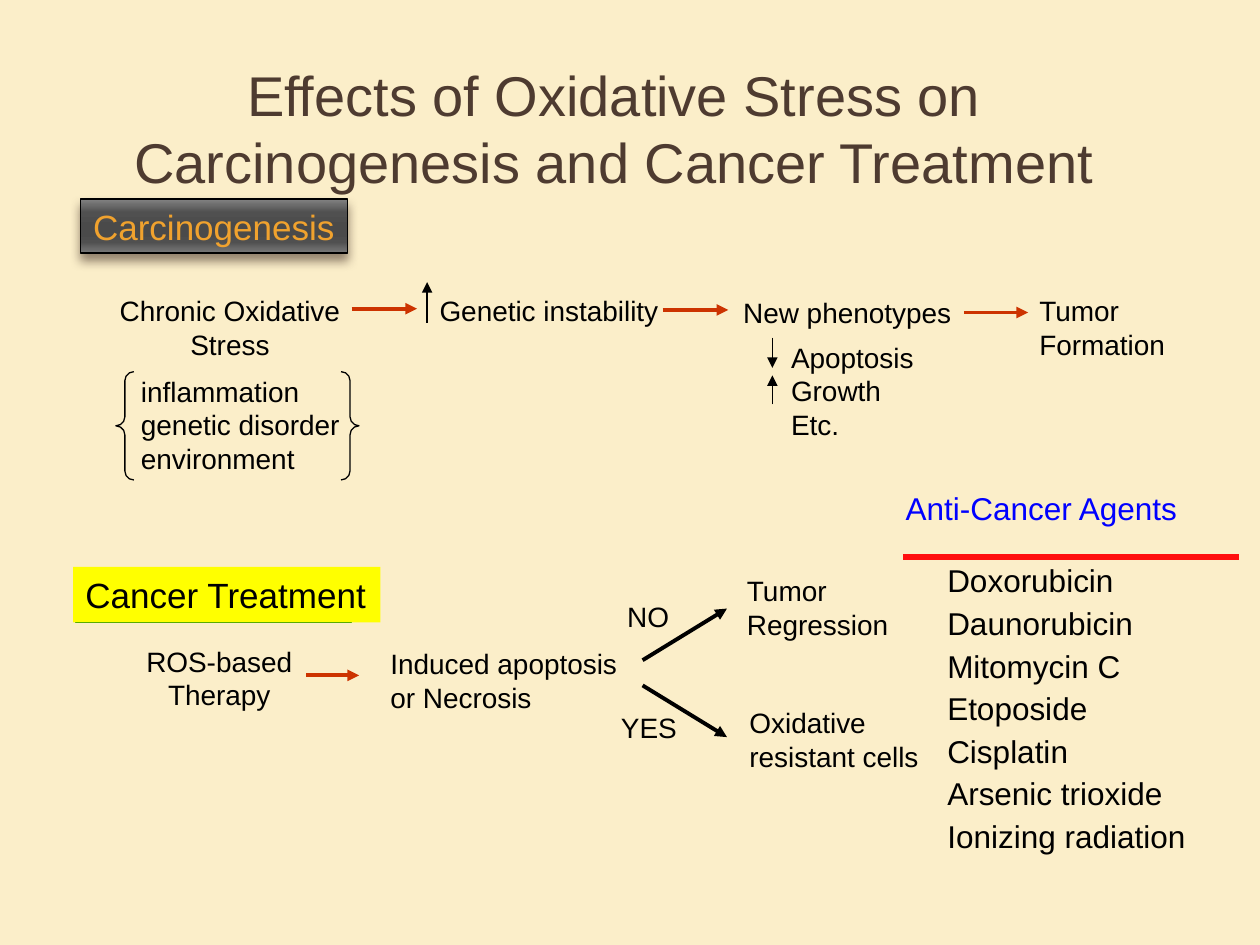
from lxml import etree
from pptx import Presentation
from pptx import util as u
from pptx.dml.color import RGBColor
from pptx.enum import shapes, text
from pptx.oxml import parse_xml
from pptx.oxml.ns import qn

Inches, Pt = u.Inches, u.Pt
Shape = shapes.MSO_SHAPE
LEFT, CENTER = text.PP_ALIGN.LEFT, text.PP_ALIGN.CENTER
MAIN = "http://schemas.openxmlformats.org/drawingml/2006/main"
COLORS = {
    "cream": "FBEEC9", "brown": "4E3B30", "black": "000000", "rust": "CC3300",
    "orange": "F0A22E", "green": "008000", "yellow": "FFFF00",
    "blue": "0000FF", "red": "FF0F0F",
}
COLORS = {name: RGBColor.from_string(value) for name, value in COLORS.items()}


def write(box, lines, size=16, color="black", align=LEFT, wrap=False, after=0):
    frame = box.text_frame
    frame_format = {
        "word_wrap": wrap,
        "auto_size": text.MSO_AUTO_SIZE.SHAPE_TO_FIT_TEXT,
        "vertical_anchor": text.MSO_ANCHOR.MIDDLE,
    }
    for name, value in frame_format.items():
        setattr(frame, name, value)
    for index, line in enumerate(lines):
        para = frame.add_paragraph() if index else frame.paragraphs[0]
        para.alignment = align
        para.space_after = Pt(after)
        span = para.add_run()
        span.text = line
        for name, value in {"name": "Arial", "size": Pt(size)}.items():
            setattr(span.font, name, value)
        span.font.color.rgb = COLORS[color]


def add_shape(kind, place, fill=None, line=None, width=0.75):
    shape = page.shapes.add_shape(kind, *map(Inches, place))
    shape.shadow.inherit = False
    for part, color in ((shape.fill, fill), (shape.line.fill, line)):
        if color:
            part.solid()
            part.fore_color.rgb = COLORS[color]
        else:
            part.background()
    if line:
        shape.line.width = Pt(width)
    return shape


deck = Presentation()
deck.slide_width, deck.slide_height = Inches(10), Inches(7.5)
page = deck.slides.add_slide(deck.slide_layouts[6])
page.background.fill.solid()
page.background.fill.fore_color.rgb = COLORS["cream"]

centered = {"align": CENTER, "wrap": True}
wrapped = {"wrap": True}
agents = ["Doxorubicin", "Daunorubicin", "Mitomycin C", "Etoposide",
          "Cisplatin", "Arsenic trioxide", "Ionizing radiation"]
labels = [
    ((0.5, 0.42, 8.75, 1.18),
     ["Effects of Oxidative Stress on Carcinogenesis and Cancer Treatment"],
     {"size": 32, "color": "brown", **centered}),
    ((0.58, 2.28, 2.49, 0.64), ["Chronic Oxidative Stress"], centered),
    ((1.02, 2.92, 1.78, 0.9),
     ["inflammation", "genetic disorder", "environment"], {}),
    ((8.15, 2.28, 1.21, 0.64), ["Tumor", "Formation"], {}),
    ((3.39, 2.28, 2.08, 0.37), ["Genetic instability"], wrapped),
    ((5.8, 2.29, 1.85, 0.37), ["New phenotypes"], {}),
    ((6.18, 2.65, 1.57, 0.9), ["Apoptosis", "Growth", "Etc."], wrapped),
    ((1.03, 5.06, 1.42, 0.64), ["ROS-based", "Therapy"], {"align": CENTER}),
    ((3, 5.08, 2.17, 0.64), ["Induced apoptosis", "or Necrosis"], wrapped),
    ((5.83, 4.5, 1.32, 0.64), ["Tumor", "Regression"], {}),
    ((5.85, 5.55, 1.56, 0.64), ["Oxidative", "resistant cells"], {}),
    ((4.88, 4.71, 0.6, 0.37), ["NO"], wrapped),
    ((4.83, 5.59, 0.71, 0.37), ["YES"], wrapped),
    ((6.53, 3.83, 3.47, 0.4), ["Anti-Cancer Agents"],
     {"size": 18, "color": "blue", **centered}),
    ((7.42, 4.42, 2.17, 2.4), agents, {"size": 18, "after": 2.75, **wrapped}),
]
for place, lines, style in labels:
    write(page.shapes.add_textbox(*map(Inches, place)), lines, **style)

braces = add_shape(Shape.DOUBLE_BRACE, (0.92, 2.95, 1.93, 0.86), line="black")
braces.adjustments[0] = 0.083

heading = add_shape(Shape.RECTANGLE, (0.64, 1.58, 2.12, 0.43),
                    fill="black", line="black", width=0.79)
write(heading, ["Carcinogenesis"], size=20, color="orange")
stops = {0: "828282", 25: "505050", 50: "4A4A4A",
         65: "4A4A4A", 80: "505050", 100: "7A7A7A"}
stop_xml = "".join(
    f'<a:gs pos="{position * 1000}"><a:srgbClr val="{color}"/></a:gs>'
    for position, color in stops.items())
gradient = parse_xml(
    f'<a:gradFill xmlns:a="{MAIN}" rotWithShape="1"><a:gsLst>{stop_xml}</a:gsLst>'
    '<a:lin ang="5400000" scaled="0"/></a:gradFill>')
properties = heading._element.spPr
properties.replace(properties.find(qn("a:solidFill")), gradient)
shadow = parse_xml(
    f'<a:outerShdw xmlns:a="{MAIN}" blurRad="{Pt(6)}" dist="{Pt(4)}" dir="5400000" '
    f'rotWithShape="0"><a:srgbClr val="{COLORS["brown"]}"><a:alpha val="60000"/>'
    '</a:srgbClr></a:outerShdw>')
properties.find(qn("a:effectLst")).append(shadow)

add_shape(Shape.RECTANGLE, (0.6, 4.54, 2.19, 0.4),
          fill="green", line="green", width=1)
treatment = add_shape(Shape.RECTANGLE, (0.58, 4.5, 2.44, 0.44), fill="yellow")
write(treatment, ["Cancer Treatment"], size=20)

connectors = [
    ((3.39, 2.56, 3.39, 2.24), "black", 0.75, True),
    ((6.13, 2.68, 6.13, 2.92), "black", 0.75, True),
    ((6.13, 3.21, 6.13, 2.98), "black", 0.75, True),
    ((2.79, 2.45, 3.31, 2.45), "rust", 2.25, True),
    ((5.26, 2.46, 5.78, 2.46), "rust", 2.25, True),
    ((7.65, 2.48, 8.16, 2.48), "rust", 2.25, True),
    ((2.43, 5.36, 2.85, 5.36), "rust", 2.25, True),
    ((5.1, 5.24, 5.77, 4.83), "black", 2.25, True),
    ((5.1, 5.44, 5.77, 5.85), "black", 2.25, True),
    ((7.17, 4.42, 9.83, 4.42), "red", 3, False),
]
for ends, color, width, pointed in connectors:
    connector = page.shapes.add_connector(
        shapes.MSO_CONNECTOR.STRAIGHT, *map(Inches, ends))
    connector.line.color.rgb = COLORS[color]
    connector.line.width = Pt(width)
    if pointed:
        etree.SubElement(connector.line._get_or_add_ln(), qn("a:tailEnd"),
                         type="triangle")
    etree.SubElement(connector._element.spPr, qn("a:effectLst"))

deck.save("out.pptx")
